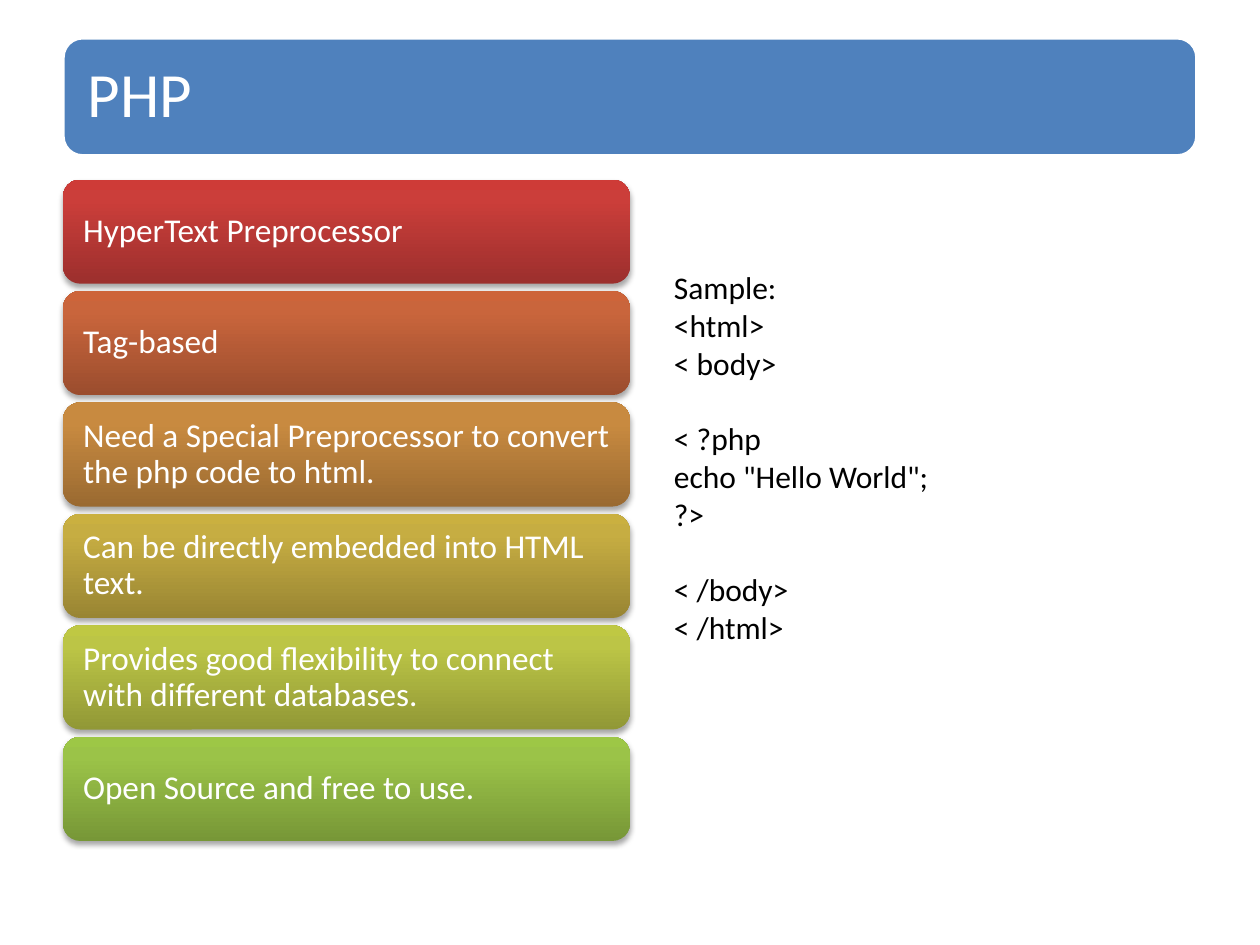
from lxml import etree
from pptx import Presentation
from pptx.dml.color import RGBColor
from pptx.enum.shapes import MSO_SHAPE
from pptx.enum.text import MSO_ANCHOR
from pptx.oxml import parse_xml
from pptx.oxml.ns import nsdecls, qn
from pptx.util import Inches, Pt

ROUNDED = MSO_SHAPE.ROUNDED_RECTANGLE
MIDDLE, TOP = MSO_ANCHOR.MIDDLE, MSO_ANCHOR.TOP
FONT = "Calibri"
WIDTH, HEIGHT = 10, 7.5

COLORS = {"header": "4F81BD", "white": "FFFFFF", "black": "000000"}

# Each feature with its gradient from bottom to top
FEATURES = [
    ("HyperText Preprocessor", ("9C2F2D", "CB3E3A", "CE3B37")),
    ("Tag-based", ("9B4D2E", "C9653C", "CD643A")),
    ("Need a Special Preprocessor to convert the php code to html.",
     ("9A6A31", "C88A40", "CB8B3D")),
    ("Can be directly embedded into HTML text.",
     ("998533", "C6AD42", "CAB040")),
    ("Provides good flexibility to connect with different databases.",
     ("919836", "BCC546", "BFC843")),
    ("Open Source and free to use.", ("779737", "9BC348", "9DC746")),
]
GRADIENT_STOPS = (0, 80, 100)

SAMPLE = """Sample:
<html>
< body>

< ?php
echo "Hello World";
?>

< /body>
< /html>"""


def inches(box):
    return [Inches(length) for length in box]


def write(shape, text, size, color, anchor, inset=None, spacing=None):
    """Fill a shape with one left-aligned paragraph."""
    frame = shape.text_frame
    frame.word_wrap = True
    frame.vertical_anchor = anchor
    if inset is not None:
        frame.margin_left = frame.margin_right = Inches(inset)
        frame.margin_top = frame.margin_bottom = Inches(inset)
    paragraph = frame.paragraphs[0]
    paragraph.text = text
    paragraph.line_spacing = spacing
    paragraph.alignment = 1
    for run in paragraph.runs:
        run.font.name = FONT
        run.font.size = Pt(size)
        run.font.color.rgb = RGBColor.from_string(COLORS[color])


def add_gradient(shape, colors):
    """Run a linear gradient from the bottom edge to the top."""
    stops = "".join(
        f'<a:gs pos="{stop * 1000}"><a:srgbClr val="{color}"/></a:gs>'
        for stop, color in zip(GRADIENT_STOPS, colors))
    gradient = parse_xml(
        f'<a:gradFill {nsdecls("a")} rotWithShape="1"><a:gsLst>{stops}</a:gsLst>'
        '<a:lin ang="16200000" scaled="0"/></a:gradFill>')
    shape._element.spPr.find(qn("a:prstGeom")).addnext(gradient)


def add_soft_shadow(shape):
    """Drop a soft shadow straight down."""
    shape.shadow.inherit = False
    effects = shape._element.spPr.find(qn("a:effectLst"))
    shadow = etree.SubElement(
        effects, qn("a:outerShdw"), blurRad=str(Pt(3.1)), dist=str(Pt(1.8)),
        dir="5400000", rotWithShape="0")
    color = etree.SubElement(shadow, qn("a:srgbClr"), val=COLORS["black"])
    etree.SubElement(color, qn("a:alpha"), val="35000")


def add_header(slide, box):
    """Title bar with its text inset from the rounded edge."""
    left, top, width, height = box
    bar = slide.shapes.add_shape(ROUNDED, *inches(box))
    bar.shadow.inherit = False
    bar.fill.solid()
    bar.fill.fore_color.rgb = RGBColor.from_string(COLORS["header"])
    bar.line.color.rgb = RGBColor.from_string(COLORS["white"])
    bar.line.width = Pt(2)
    edge = height * 0.05
    title = slide.shapes.add_textbox(*inches(
        (left + edge, top + edge, width - 2 * edge, height - 2 * edge)))
    write(title, "PHP", 36, "white", MIDDLE, inset=0.15, spacing=0.9)


def add_features(slide, box):
    """Stack of equal cards, one per feature."""
    left, top, width, height = box
    gap = height * 0.011
    card_height = (height - gap * (len(FEATURES) - 1)) / len(FEATURES)
    for row, (text, colors) in enumerate(FEATURES):
        card_top = top + row * (card_height + gap)
        card = slide.shapes.add_shape(
            ROUNDED, *inches((left, card_top, width, card_height)))
        card.line.fill.background()
        add_gradient(card, colors)
        add_soft_shadow(card)
        write(card, text, 19, "white", MIDDLE, inset=0.12, spacing=0.9)


def add_sample(slide, box):
    """Code sample as one paragraph with line breaks."""
    sample = slide.shapes.add_textbox(*inches(box))
    write(sample, SAMPLE, 18, "black", TOP)


def main():
    presentation = Presentation()
    presentation.slide_width = Inches(WIDTH)
    presentation.slide_height = Inches(HEIGHT)
    slide = presentation.slides.add_slide(presentation.slide_layouts[6])

    margin = WIDTH * 0.05
    column = (WIDTH - 2 * margin) / 2
    add_header(slide, (margin, HEIGHT * 0.04, 2 * column, HEIGHT * 0.125))
    add_features(slide, (margin, HEIGHT * 0.19, column, HEIGHT * 0.7))
    add_sample(slide, (margin + column + WIDTH * 0.025, HEIGHT * 0.277,
                       WIDTH * 0.442, HEIGHT * 0.417))
    presentation.save("out.pptx")


if __name__ == "__main__":
    main()
